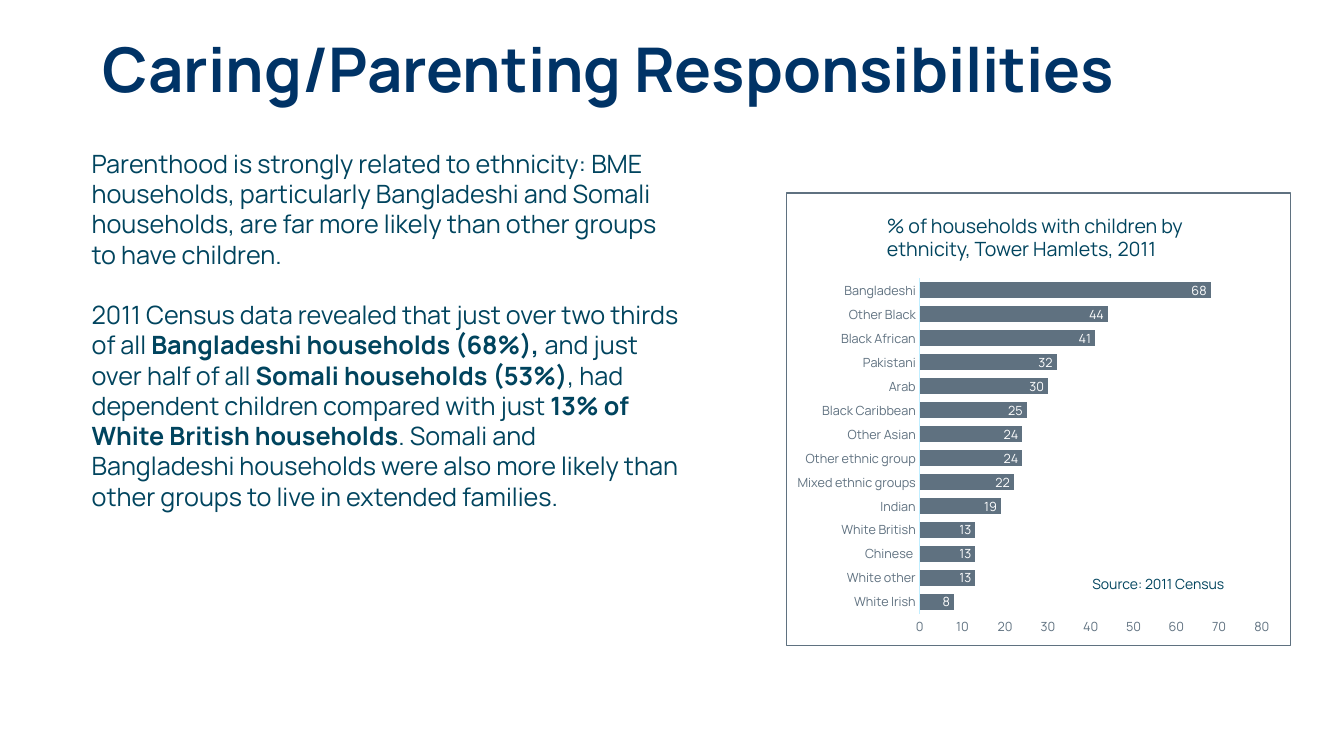
from dataclasses import dataclass

from lxml import etree
from pptx import Presentation
from pptx import util as u
from pptx.chart.data import CategoryChartData
from pptx.dml.color import RGBColor
from pptx.enum import chart as charts, text
from pptx.oxml import parse_xml
from pptx.oxml.ns import nsdecls, qn


@dataclass(frozen=True)
class Theme:
    font: str = "Manrope"
    navy: str = "003366"
    teal: str = "00445E"
    slate: str = "5F7180"
    pale: str = "C1EEFF"
    white: str = "FFFFFF"
    title: float = 44
    body: float = 18
    caption: float = 14
    note: float = 10
    label: float = 9
    line: float = 0.75
    paragraph_gap: float = 21.6


@dataclass(frozen=True)
class Box:
    left: float
    top: float
    width: float
    height: float

    def lengths(self):
        return [u.Cm(n) for n in (self.left, self.top, self.width, self.height)]

    def inner(self, left, top, width, height):
        return Box(self.left + left, self.top + top, width, height)


THEME = Theme()

BODY = [
    [("Parenthood is strongly related to ethnicity: BME households, particularly "
      "Bangladeshi and Somali households, are far more likely than other groups "
      "to have children.", False)],
    [("2011 Census data revealed that just over two thirds of all ", False),
     ("Bangladeshi households (68%), ", True),
     ("and just over half of all ", False),
     ("Somali households (53%)", True),
     (", had dependent children compared with just ", False),
     ("13% of White British households", True),
     (". Somali and Bangladeshi households were also more likely than other "
      "groups to live in extended families.", False)],
]

HOUSEHOLDS = {
    "White Irish": 8, "White other": 13, "Chinese ": 13, "White British": 13,
    "Indian": 19, "Mixed ethnic groups": 22, "Other ethnic group": 24,
    "Other Asian": 24, "Black Caribbean": 25, "Arab": 30, "Pakistani": 32,
    "Black African": 41, "Other Black": 44, "Bangladeshi": 68,
}


def style(font, size, color, bold=False):
    font.name = THEME.font
    font.size = u.Pt(size)
    font.bold = bold
    font.color.rgb = RGBColor.from_string(color)


def add_span(para, wording, size, color, bold=False):
    span = para.add_run()
    span.text = wording
    style(span.font, size, color, bold)


def add_text(page, box, paragraphs, size):
    frame = page.shapes.add_textbox(*box.lengths()).text_frame
    frame.word_wrap = True
    for index, spans in enumerate(paragraphs):
        para = frame.add_paragraph() if index else frame.paragraphs[0]
        if index:
            para.space_before = u.Pt(THEME.paragraph_gap)
        for wording, bold in spans:
            add_span(para, wording, size, THEME.teal, bold)


def add_title(page, box, wording):
    title = page.shapes.title
    title.left, title.top, title.width, title.height = box.lengths()
    frame = title.text_frame
    frame.word_wrap = True
    frame.auto_size = text.MSO_AUTO_SIZE.NONE
    frame.vertical_anchor = text.MSO_ANCHOR.MIDDLE
    para = frame.paragraphs[0]
    para.alignment = text.PP_ALIGN.LEFT
    para.line_spacing = 0.9
    add_span(para, wording, THEME.title, THEME.navy, True)


def frame_chart(chart, x, y, width, height):
    space = chart.element
    for old in space.findall(qn("c:roundedCorners")):
        space.remove(old)
    corners = parse_xml(f'<c:roundedCorners {nsdecls("c")} val="0"/>')
    date = space.find(qn("c:date1904"))
    if date is None:
        space.insert(0, corners)
    else:
        date.addnext(corners)
    space.find(qn("c:chart")).addnext(parse_xml(
        f'<c:spPr {nsdecls("c", "a")}><a:noFill/>'
        f'<a:ln w="{int(u.Pt(THEME.line))}"><a:solidFill>'
        f'<a:srgbClr val="{THEME.slate}"/></a:solidFill></a:ln></c:spPr>'))

    plot_area = space.find(qn("c:chart")).find(qn("c:plotArea"))
    for old in plot_area.findall(qn("c:layout")):
        plot_area.remove(old)
    layout = parse_xml(f'<c:layout {nsdecls("c")}><c:manualLayout/></c:layout>')
    settings = [("layoutTarget", "inner"), ("xMode", "edge"), ("yMode", "edge"),
                ("x", x), ("y", y), ("w", width), ("h", height)]
    for name, value in settings:
        etree.SubElement(layout[0], qn(f"c:{name}")).set("val", str(value))
    plot_area.insert(0, layout)


def style_axes(chart):
    for axis in (chart.category_axis, chart.value_axis):
        axis.has_major_gridlines = False
        axis.major_tick_mark = charts.XL_TICK_MARK.NONE
        axis.minor_tick_mark = charts.XL_TICK_MARK.NONE
        style(axis.tick_labels.font, THEME.label, THEME.slate)
    category_line = chart.category_axis.format.line
    category_line.color.rgb = RGBColor.from_string(THEME.pale)
    category_line.width = u.Pt(THEME.line)
    values = chart.value_axis
    values.format.line.fill.background()
    values.minimum_scale, values.maximum_scale, values.major_unit = 0, 80, 10


def add_household_chart(page, box):
    data = CategoryChartData(number_format="General")
    data.categories = list(HOUSEHOLDS)
    data.add_series("Series 1", list(HOUSEHOLDS.values()))
    chart = page.shapes.add_chart(
        charts.XL_CHART_TYPE.BAR_CLUSTERED, *box.lengths(), data).chart
    chart.has_legend = False
    chart.has_title = False
    style(chart.font, THEME.note, THEME.teal)
    frame_chart(chart, 0.264, 0.189, 0.679, 0.742)
    style_axes(chart)

    plot = chart.plots[0]
    plot.gap_width = 50
    plot.vary_by_categories = False
    bars = plot.series[0]
    bars.format.fill.solid()
    bars.format.fill.fore_color.rgb = RGBColor.from_string(THEME.slate)
    labels = bars.data_labels
    labels.show_value = True
    labels.position = charts.XL_LABEL_POSITION.INSIDE_END
    style(labels.font, THEME.label, THEME.white)

    add_text(page, box.inner(2.29, 0.41, 9.35, 1.45),
             [[("% of households with children by ethnicity, Tower Hamlets, 2011", False)]],
             THEME.caption)
    add_text(page, box.inner(7.47, 9.53, 4.42, 0.69),
             [[("Source: 2011 Census", False)]], THEME.note)


def main():
    deck = Presentation()
    deck.slide_width, deck.slide_height = u.Cm(33.87), u.Cm(19.05)
    page = deck.slides.add_slide(deck.slide_layouts.get_by_name("Title Only"))
    add_title(page, Box(2.34, 0, 27.13, 3.68), "Caring/Parenting Responsibilities")
    add_text(page, Box(2.06, 3.61, 15.37, 9.5), BODY, THEME.body)
    add_household_chart(page, Box(19.81, 4.85, 12.73, 11.43))
    deck.save("out.pptx")


if __name__ == "__main__":
    main()
